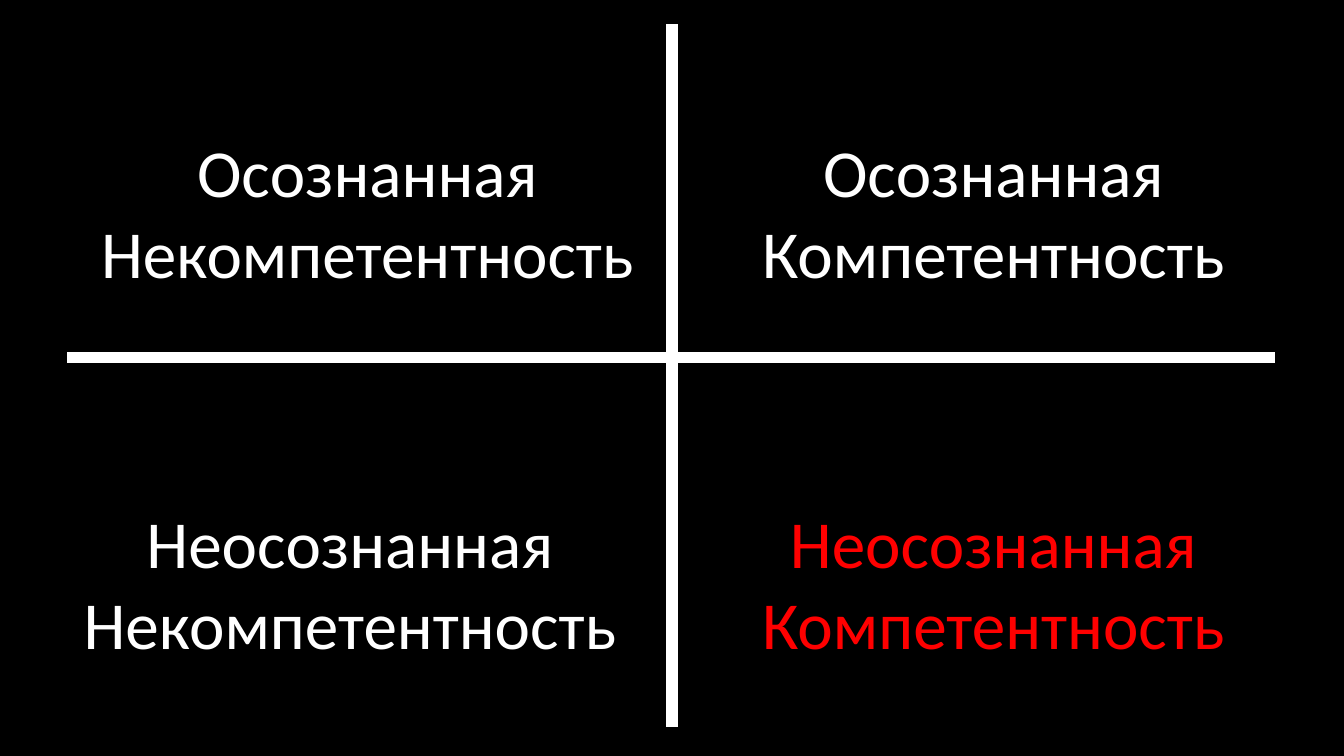
from lxml.etree import SubElement
from pptx import Presentation
from pptx.dml.color import RGBColor
from pptx.enum.shapes import MSO_CONNECTOR
from pptx.enum.text import MSO_AUTO_SIZE, PP_ALIGN
from pptx.oxml.ns import qn
from pptx.util import Cm, Pt

COLORS = {"background": "000000", "base": "FFFFFF", "accent": "FF0000"}


def color(name):
    """Return the named colour."""
    return RGBColor.from_string(COLORS[name])


def add_axis(s, x1, y1, x2, y2):
    """Draw one thick axis between two points in centimetres."""
    axis = s.shapes.add_connector(MSO_CONNECTOR.STRAIGHT, Cm(x1), Cm(y1), Cm(x2), Cm(y2))
    axis.line.color.rgb = color("base")
    axis.line.width = Pt(6)
    SubElement(axis._element.spPr, qn("a:effectLst"))


def add_cross(s, left, top, width, height):
    """Draw the two axes that divide the given box into quadrants."""
    x, y = 12.7, 6.76
    add_axis(s, x, top + height, x, top)
    add_axis(s, left, y, left + width, y)


def add_quadrant(s, left, top, width, height, lines, color_name):
    """Place the centred label of one quadrant in the given box."""
    sp = s.shapes.add_textbox(Cm(left), Cm(top), Cm(width), Cm(height))
    tf = sp.text_frame
    tf.word_wrap = False
    tf.auto_size = MSO_AUTO_SIZE.SHAPE_TO_FIT_TEXT
    tf.text = "\n".join(lines)
    for p in tf.paragraphs:
        p.alignment = PP_ALIGN.CENTER
        p.font.name = "Calibri"
        p.font.size = Pt(36)
        p.font.color.rgb = color(color_name)


def add_matrix(s):
    """Build the competence matrix from its axes and four labels."""
    add_cross(s, 1.27, 0.46, 22.83, 13.28)
    upper, lower = 2.34, 9.35
    narrow, wide, height = 9.35, 10.69, 3.33
    right = 14.1
    quadrants = [
        (1.27, lower, wide, "Неосознанная", "Некомпетентность", "base"),
        (right, lower, narrow, "Неосознанная", "Компетентность", "accent"),
        (1.6, upper, wide, "Осознанная", "Некомпетентность", "base"),
        (right, upper, narrow, "Осознанная", "Компетентность", "base"),
    ]
    for left, top, width, awareness, skill, color_name in quadrants:
        add_quadrant(s, left, top, width, height, (awareness, skill), color_name)


def main():
    """Create and save the presentation."""
    prs = Presentation()
    prs.slide_width, prs.slide_height = Cm(25.4), Cm(14.29)
    s = prs.slides.add_slide(prs.slide_layouts[6])
    s.background.fill.solid()
    s.background.fill.fore_color.rgb = color("background")
    add_matrix(s)
    prs.save("out.pptx")


if __name__ == "__main__":
    main()
